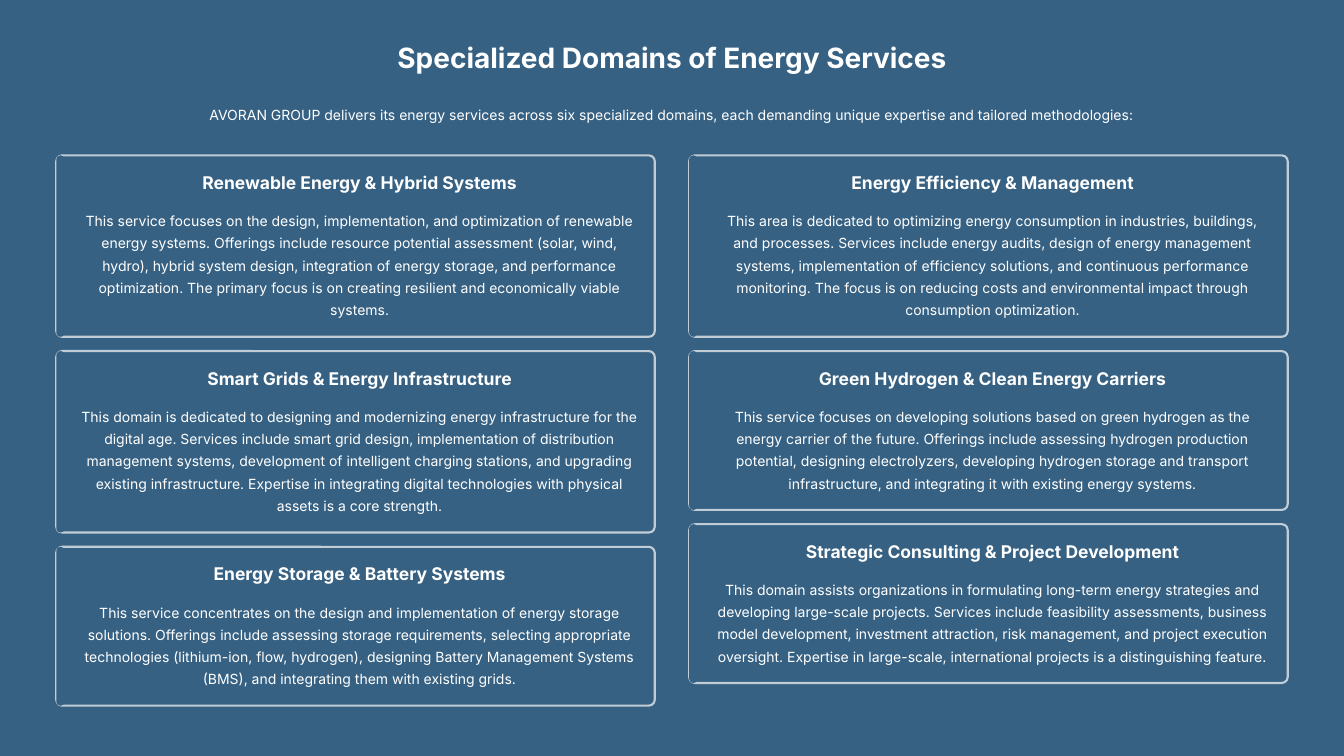
from dataclasses import dataclass

from pptx import Presentation
from pptx.dml.color import RGBColor
from pptx.enum.shapes import MSO_SHAPE
from pptx.enum.text import MSO_ANCHOR, MSO_AUTO_SIZE, PP_ALIGN
from pptx.util import Inches, Pt

TITLE = "Specialized Domains of Energy Services"
INTRO = ("AVORAN GROUP delivers its energy services across six specialized domains, "
         "each demanding unique expertise and tailored methodologies:")

# One list per column: (heading, number of body lines, body)
COLUMNS = [
    [
        ("Renewable Energy & Hybrid Systems", 5,
         "This service focuses on the design, implementation, and optimization of renewable energy "
         "systems. Offerings include resource potential assessment (solar, wind, hydro), hybrid "
         "system design, integration of energy storage, and performance optimization. The primary "
         "focus is on creating resilient and economically viable systems."),
        ("Smart Grids & Energy Infrastructure", 5,
         "This domain is dedicated to designing and modernizing energy infrastructure for the "
         "digital age. Services include smart grid design, implementation of distribution "
         "management systems, development of intelligent charging stations, and upgrading existing "
         "infrastructure. Expertise in integrating digital technologies with physical assets is a "
         "core strength."),
        ("Energy Storage & Battery Systems", 4,
         "This service concentrates on the design and implementation of energy storage solutions. "
         "Offerings include assessing storage requirements, selecting appropriate technologies "
         "(lithium-ion, flow, hydrogen), designing Battery Management Systems (BMS), and "
         "integrating them with existing grids."),
    ],
    [
        ("Energy Efficiency & Management", 5,
         "This area is dedicated to optimizing energy consumption in industries, buildings, and "
         "processes. Services include energy audits, design of energy management systems, "
         "implementation of efficiency solutions, and continuous performance monitoring. The focus "
         "is on reducing costs and environmental impact through consumption optimization."),
        ("Green Hydrogen & Clean Energy Carriers", 4,
         "This service focuses on developing solutions based on green hydrogen as the energy "
         "carrier of the future. Offerings include assessing hydrogen production potential, "
         "designing electrolyzers, developing hydrogen storage and transport infrastructure, and "
         "integrating it with existing energy systems."),
        ("Strategic Consulting & Project Development", 4,
         "This domain assists organizations in formulating long-term energy strategies and "
         "developing large-scale projects. Services include feasibility assessments, business "
         "model development, investment attraction, risk management, and project execution "
         "oversight. Expertise in large-scale, international projects is a distinguishing feature."),
    ],
]


@dataclass(frozen=True)
class Theme:
    font: str = "Inter"
    ground: RGBColor = RGBColor(0x36, 0x61, 0x83)
    border: RGBColor = RGBColor(0xC1, 0xCD, 0xD6)
    text: RGBColor = RGBColor(0xFF, 0xFF, 0xFF)
    title: float = 24
    heading: float = 15
    body: float = 12
    border_width: float = 1.8


THEME = Theme()

# Grid, in inches
WIDTH, HEIGHT = 16, 9
MARGIN, TOP = 0.67, 1.85
COLUMN_GAP, CARD_GAP = 0.41, 0.17
CARD_W = (WIDTH - 2 * MARGIN - COLUMN_GAP) / 2
BAR_W, RADIUS = 0.1, 0.07
PAD, TEXT_INSET = 0.19, 0.29
HEADING_H, HEADING_GAP = 0.26, 0.17
LINE_PITCH, LINE_H = 19, 0.27


def write(shape, text, size, pitch, bold=False):
    """Fill a shape with one centred paragraph on a fixed line pitch."""
    tf = shape.text_frame
    tf.margin_left = tf.margin_right = tf.margin_top = tf.margin_bottom = 0
    tf.word_wrap, tf.auto_size = True, MSO_AUTO_SIZE.NONE
    tf.vertical_anchor = MSO_ANCHOR.TOP
    p = tf.paragraphs[0]
    p.alignment, p.line_spacing = PP_ALIGN.CENTER, Pt(pitch)
    r = p.add_run()
    r.text = text
    r.font.name, r.font.size, r.font.bold = THEME.font, Pt(size), bold
    r.font.color.rgb = THEME.text


def add_text(s, x, y, w, h, text, **fmt):
    write(s.shapes.add_textbox(*map(Inches, (x, y, w, h))), text, **fmt)


def add_panel(s, x, y, w, h, outlined):
    sp = s.shapes.add_shape(MSO_SHAPE.ROUNDED_RECTANGLE, *map(Inches, (x, y, w, h)))
    sp.adjustments[0] = RADIUS / min(w, h)
    sp.shadow.inherit = False
    sp.fill.solid()
    sp.fill.fore_color.rgb = THEME.ground
    if outlined:
        sp.line.color.rgb, sp.line.width = THEME.border, Pt(THEME.border_width)
    else:
        sp.line.fill.background()


def add_card(s, x, y, heading, lines, body):
    """Draw one card and return its height."""
    body_top = PAD + HEADING_H + HEADING_GAP
    body_h = lines * LINE_H
    height = body_top + body_h + PAD
    text_x, text_w = x + TEXT_INSET, CARD_W - TEXT_INSET - PAD
    add_panel(s, x, y, CARD_W, height, outlined=True)
    add_panel(s, x, y, BAR_W, height, outlined=False)
    add_text(s, text_x, y + PAD, text_w, HEADING_H, heading,
             size=THEME.heading, pitch=18.5, bold=True)
    add_text(s, text_x, y + body_top, text_w, body_h, body,
             size=THEME.body, pitch=LINE_PITCH)
    return height


def main():
    prs = Presentation()
    prs.slide_width, prs.slide_height = Inches(WIDTH), Inches(HEIGHT)
    s = prs.slides.add_slide(prs.slide_layouts.get_by_name("Title Only"))
    s.background.fill.solid()
    s.background.fill.fore_color.rgb = THEME.ground

    inner_w = WIDTH - 2 * MARGIN
    title = s.shapes.title
    title.left, title.top, title.width, title.height = map(
        Inches, (MARGIN, 0.46, inner_w, 0.42))
    write(title, TITLE, size=THEME.title, pitch=30, bold=True)
    add_text(s, MARGIN, 1.21, inner_w, LINE_H, INTRO, size=THEME.body, pitch=LINE_PITCH)

    for col, cards in enumerate(COLUMNS):
        x, y = MARGIN + col * (CARD_W + COLUMN_GAP), TOP
        for card in cards:
            y += add_card(s, x, y, *card) + CARD_GAP

    prs.save("out.pptx")


if __name__ == "__main__":
    main()
